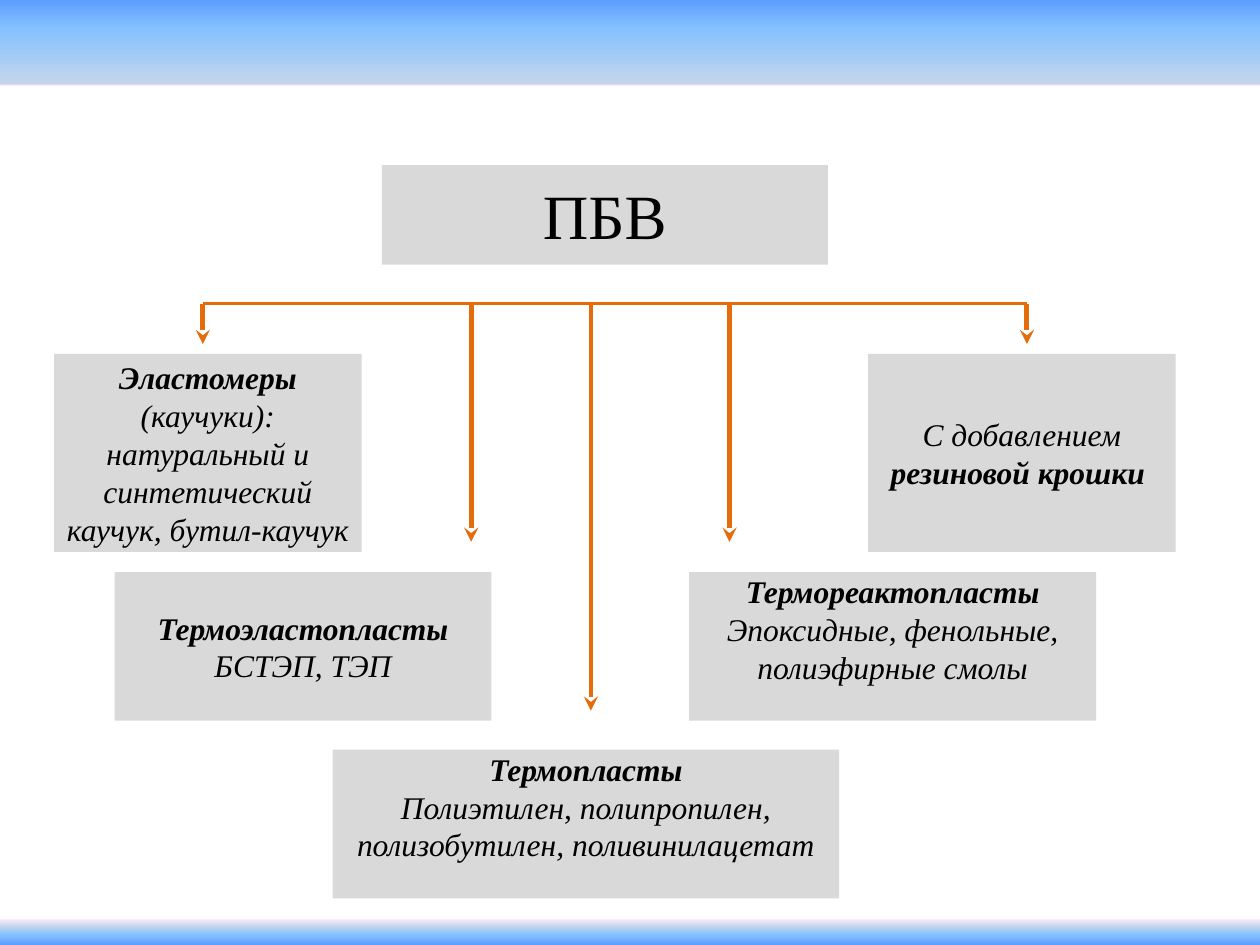
from dataclasses import dataclass

import pptx
import pptx.dml.color
import pptx.enum.dml
import pptx.enum.shapes
import pptx.enum.text
import pptx.oxml
import pptx.oxml.ns
import pptx.util

Inches = pptx.util.Inches
Pt = pptx.util.Pt
RGBColor = pptx.dml.color.RGBColor
Anchor = pptx.enum.text.MSO_ANCHOR


@dataclass(frozen=True)
class Theme:
    font: str = "Times New Roman"
    title_size: float = 36
    body_size: float = 18
    text: str = "000000"
    panel: str = "D9D9D9"
    arrow: str = "E46C0A"
    arrow_width: float = 2.75
    bar_width: float = 1.75
    header: tuple = ((0, "5E9EFF"), (35, "85C2FF"), (98, "C4D6EB"), (100, "FFEBFA"))
    footer: tuple = ((0, "5E9EFF"), (40, "85C2FF"), (70, "C4D6EB"), (100, "FFEBFA"))


THEME = Theme()
BAR_TOP = 2.41
ARROWS = ((1.61, 2.73), (3.74, 4.3), (4.69, 5.64), (5.79, 4.3), (8.15, 2.73))

CLASSES = (
    ((0.43, 2.81, 2.44, 1.57), Anchor.MIDDLE, (
        (("Эластомеры", True), (" (каучуки):", False)),
        (("натуральный и синтетический каучук, бутил-каучук", False),))),
    ((0.91, 4.54, 2.99, 1.18), Anchor.MIDDLE, (
        (("Термоэластопласты", True),),
        (("БСТЭП, ТЭП", False),))),
    ((2.64, 5.95, 4.02, 1.18), Anchor.TOP, (
        (("Термопласты", True),),
        (("Полиэтилен, полипропилен, полизобутилен, поливинилацетат", False),))),
    ((5.47, 4.54, 3.23, 1.18), Anchor.TOP, (
        (("Термореактопласты", True),),
        (("Эпоксидные, фенольные, полиэфирные смолы", False),))),
    ((6.89, 2.81, 2.44, 1.57), Anchor.MIDDLE, (
        (("С добавлением ", False), ("резиновой крошки ", True)),)),
)


def add_rectangle(page, place):
    box = page.shapes.add_shape(
        pptx.enum.shapes.MSO_SHAPE.RECTANGLE, *map(Inches, place))
    box.shadow.inherit = False
    box.line.fill.background()
    return box


def fill_panel(box):
    box.fill.solid()
    box.fill.fore_color.rgb = RGBColor.from_string(THEME.panel)


def style_paragraph(para, size):
    para.alignment = pptx.enum.text.PP_ALIGN.CENTER
    para.font.name = THEME.font
    para.font.size = Pt(size)
    para.font.color.rgb = RGBColor.from_string(THEME.text)


def add_band(page, place, stops, angle):
    band = add_rectangle(page, place)
    band.fill.gradient()
    band.fill.gradient_angle = angle
    stop_list = band.fill.gradient_stops[0]._gs.getparent()
    for stop in list(stop_list):
        stop_list.remove(stop)
    for position, color in stops:
        stop_list.append(pptx.oxml.parse_xml(
            f'<a:gs {pptx.oxml.ns.nsdecls("a")} pos="{position * 1000}">'
            f'<a:srgbClr val="{color}"/></a:gs>'))


def set_title(page, text, place):
    title = page.shapes.title
    title.left, title.top, title.width, title.height = map(Inches, place)
    fill_panel(title)
    frame = title.text_frame
    frame.text = text
    frame.auto_size = pptx.enum.text.MSO_AUTO_SIZE.NONE
    frame.vertical_anchor = Anchor.MIDDLE
    style_paragraph(frame.paragraphs[0], THEME.title_size)


def add_class(page, place, anchor, lines):
    box = add_rectangle(page, place)
    fill_panel(box)
    frame = box.text_frame
    frame.word_wrap = True
    frame.vertical_anchor = anchor
    frame.margin_left = frame.margin_right = Inches(0.08)
    frame.margin_top = frame.margin_bottom = Inches(0)
    for index, spans in enumerate(lines):
        para = frame.add_paragraph() if index else frame.paragraphs[0]
        style_paragraph(para, THEME.body_size)
        para.font.italic = True
        for text, bold in spans:
            span = para.add_run()
            span.text = text
            span.font.bold = bold


def add_line(page, start, end, width, arrow=False):
    line = page.shapes.add_connector(
        pptx.enum.shapes.MSO_CONNECTOR.STRAIGHT, *map(Inches, start + end))
    line.line.color.rgb = RGBColor.from_string(THEME.arrow)
    line.line.width = Pt(width)
    if arrow:
        line.line._get_or_add_ln().append(pptx.oxml.parse_xml(
            f'<a:tailEnd {pptx.oxml.ns.nsdecls("a")} type="stealth"/>'))
    line._element.spPr.append(pptx.oxml.parse_xml(
        f'<a:effectLst {pptx.oxml.ns.nsdecls("a")}/>'))


def main():
    deck = pptx.Presentation()
    deck.slide_width, deck.slide_height = Inches(10), Inches(7.5)
    page = deck.slides.add_slide(deck.slide_layouts.get_by_name("Title Only"))
    add_band(page, (0, 0, 10, 0.68), THEME.header, 270)
    add_band(page, (0, 7.29, 10, 0.21), THEME.footer, 90)
    set_title(page, "ПБВ", (3.03, 1.31, 3.54, 0.79))
    for place, anchor, lines in CLASSES:
        add_class(page, place, anchor, lines)
    for left, tip in ARROWS:
        add_line(page, (left, BAR_TOP), (left, tip), THEME.arrow_width, arrow=True)
    add_line(page, (ARROWS[0][0], BAR_TOP), (ARROWS[-1][0], BAR_TOP), THEME.bar_width)
    deck.save("out.pptx")


if __name__ == "__main__":
    main()
